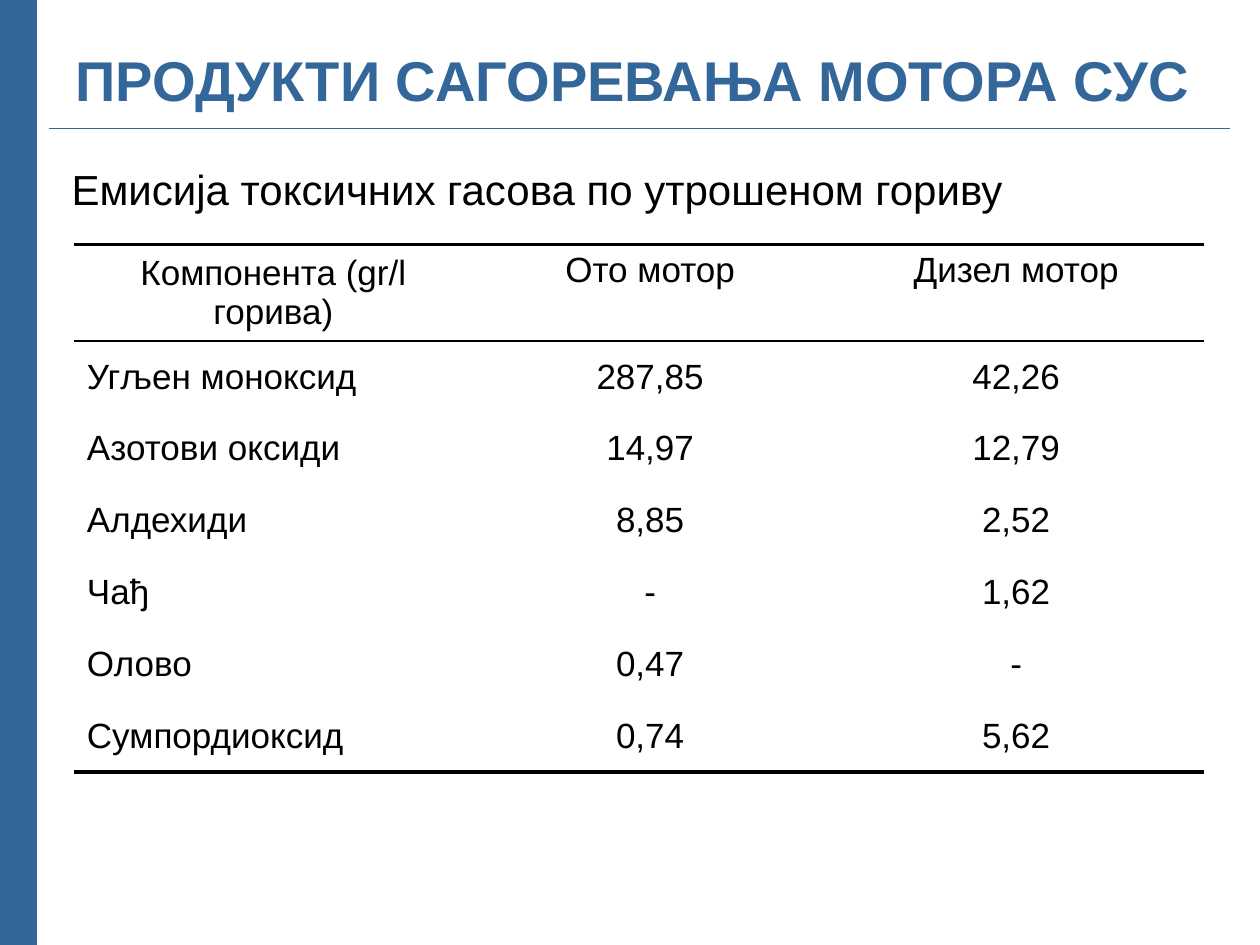
from dataclasses import dataclass

from lxml.etree import SubElement
from pptx import Presentation
from pptx.dml.color import RGBColor
from pptx.enum.shapes import MSO_CONNECTOR
from pptx.enum.text import MSO_ANCHOR, MSO_AUTO_SIZE, PP_ALIGN
from pptx.oxml import parse_xml
from pptx.oxml.ns import nsdecls, qn
from pptx.util import Inches, Pt


@dataclass(frozen=True)
class Theme:
    font: str = "Arial"
    accent: str = "336699"
    ink: str = "000000"
    title_size: int = 32
    subtitle_size: int = 24
    table_size: int = 20
    rule: float = 1.5
    closing_rule: float = 2.25


HEADER = ("Компонента (gr/l горива)", "Ото мотор", "Дизел мотор")
EMISSIONS = (
    ("Угљен моноксид", "287,85", "42,26"),
    ("Азотови оксиди", "14,97", "12,79"),
    ("Алдехиди", "8,85", "2,52"),
    ("Чађ", "-", "1,62"),
    ("Олово", "0,47", "-"),
    ("Сумпордиоксид", "0,74", "5,62"),
)
COLUMN_WIDTHS = (3.16, 2.82, 2.99)
HEADER_HEIGHT = 0.55
ROW_HEIGHT = 0.57


class SlideBuilder:
    """Draws styled elements on the current slide."""

    def __init__(self, slide, theme):
        self.slide = slide
        self.theme = theme

    def style(self, paragraph, size, color, alignment, bold=False):
        paragraph.alignment = alignment
        font = paragraph.font
        font.name = self.theme.font
        font.size = Pt(size)
        font.bold = bold
        font.color.rgb = RGBColor.from_string(color)

    def title(self, text, left, top, width, height):
        shape = self.slide.shapes.title
        shape.left, shape.top = Inches(left), Inches(top)
        shape.width, shape.height = Inches(width), Inches(height)
        frame = shape.text_frame
        frame.text = text
        frame.auto_size = MSO_AUTO_SIZE.NONE
        frame.vertical_anchor = MSO_ANCHOR.MIDDLE
        self.style(frame.paragraphs[0], self.theme.title_size,
                   self.theme.accent, PP_ALIGN.CENTER, bold=True)

    def subtitle(self, text, left, top, width, height):
        shape = self.slide.shapes.add_textbox(
            Inches(left), Inches(top), Inches(width), Inches(height))
        frame = shape.text_frame
        frame.text = text
        frame.word_wrap = True
        frame.auto_size = MSO_AUTO_SIZE.SHAPE_TO_FIT_TEXT
        frame.vertical_anchor = MSO_ANCHOR.MIDDLE
        self.style(frame.paragraphs[0], self.theme.subtitle_size,
                   self.theme.ink, PP_ALIGN.JUSTIFY)

    def line(self, start_x, start_y, end_x, end_y, weight):
        connector = self.slide.shapes.add_connector(
            MSO_CONNECTOR.STRAIGHT, Inches(start_x), Inches(start_y),
            Inches(end_x), Inches(end_y))
        connector.line.color.rgb = RGBColor.from_string(self.theme.accent)
        connector.line.width = Pt(weight)
        SubElement(connector.element.spPr, qn("a:effectLst"))

    def borders(self, cell, top, bottom):
        properties = cell._tc.get_or_add_tcPr()
        edges = {"lnL": 0, "lnR": 0, "lnT": top, "lnB": bottom}
        for position, (edge, weight) in enumerate(edges.items()):
            paint = (f'<a:solidFill><a:srgbClr val="{self.theme.ink}"/></a:solidFill>'
                     if weight else "<a:noFill/>")
            properties.insert(position, parse_xml(
                f'<a:{edge} {nsdecls("a")} w="{Pt(weight)}">{paint}</a:{edge}>'))

    def table(self, rows, left, top):
        heights = [HEADER_HEIGHT] + [ROW_HEIGHT] * (len(rows) - 1)
        shape = self.slide.shapes.add_table(
            len(rows), len(COLUMN_WIDTHS), Inches(left), Inches(top),
            Inches(sum(COLUMN_WIDTHS)), Inches(sum(heights)))
        table = shape.table
        table.first_row = False
        table.horz_banding = False
        for column, width in zip(table.columns, COLUMN_WIDTHS):
            column.width = Inches(width)
        rules = [self.theme.rule] * 2 + [0] * (len(rows) - 2) + [self.theme.closing_rule]
        for row_index, values in enumerate(rows):
            table.rows[row_index].height = Inches(heights[row_index])
            for column_index, text in enumerate(values):
                is_header, is_label = row_index == 0, column_index == 0
                cell = table.cell(row_index, column_index)
                cell.text = text
                cell.fill.background()
                cell.vertical_anchor = (MSO_ANCHOR.TOP if is_header and not is_label
                                        else MSO_ANCHOR.MIDDLE)
                self.borders(cell, rules[row_index], rules[row_index + 1])
                paragraph = cell.text_frame.paragraphs[0]
                paragraph.space_before = Pt(0.2 * self.theme.table_size)
                self.style(paragraph, self.theme.table_size, self.theme.ink,
                           PP_ALIGN.LEFT if is_label and not is_header
                           else PP_ALIGN.CENTER)


def main():
    presentation = Presentation()
    presentation.slide_width, presentation.slide_height = Inches(10), Inches(7.5)
    slide = presentation.slides.add_slide(presentation.slide_layouts[5])
    builder = SlideBuilder(slide, Theme())
    builder.title("ПРОДУКТИ САГОРЕВАЊА МОТОРА СУС", 0.43, 0, 9.18, 1.25)
    builder.line(0.02, 0, 0.02, 7.5, weight=40)
    builder.line(0.39, 1.02, 9.76, 1.02, weight=0.75)
    builder.subtitle("Емисија токсичних гасова по утрошеном гориву",
                     0.47, 1.25, 7.92, 0.5)
    builder.table((HEADER, *EMISSIONS), 0.59, 1.94)
    presentation.save("out.pptx")


if __name__ == "__main__":
    main()
